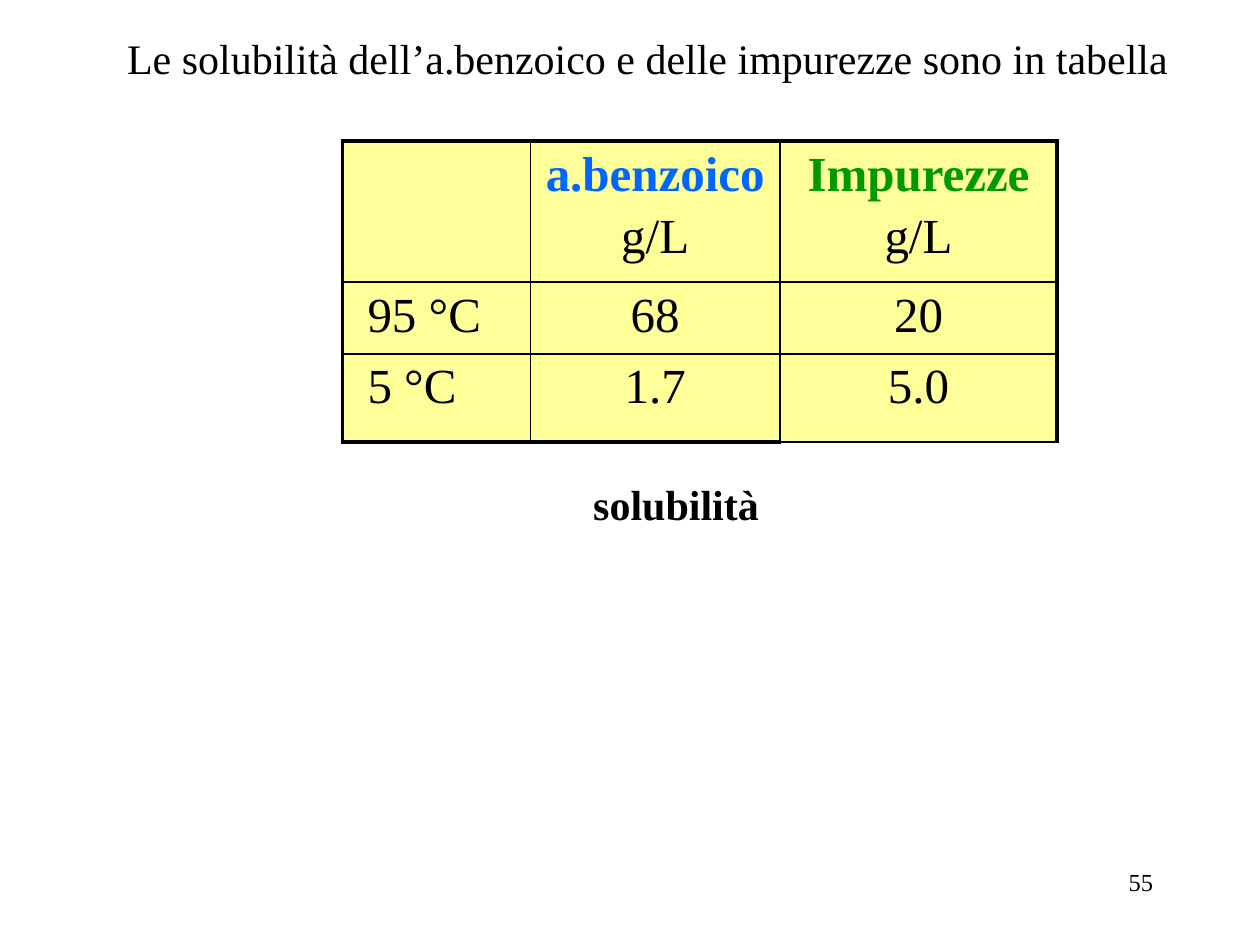
from lxml.etree import SubElement
from pptx import Presentation
from pptx.dml.color import RGBColor
from pptx.enum.text import MSO_AUTO_SIZE, PP_ALIGN
from pptx.oxml.ns import qn
from pptx.util import Inches, Pt

FONT = "Times New Roman"
COLORS = {"ink": "000000", "acid": "0066FF", "waste": "009900", "cell": "FFFF99"}
COLS = [1.49, 1.98, 2.2]
ROWS = [1.12, 0.57, 0.7]
CELLS = [
    [[], [("a.benzoico", "acid", True), ("g/L", "ink", False)],
     [("Impurezze", "waste", True), ("g/L", "ink", False)]],
    [[(" 95 °C", "ink", False)], [("68", "ink", False)], [("20", "ink", False)]],
    [[(" 5 °C", "ink", False)], [("1.7", "ink", False)], [("5.0", "ink", False)]],
]


def color(name):
    """Return the named colour."""
    return RGBColor.from_string(COLORS[name])


def add_run(para, text, size, tone="ink", bold=False):
    """Add one styled run to a paragraph."""
    run = para.add_run()
    run.text = text
    font = run.font
    font.name, font.size, font.bold = FONT, Pt(size), bold
    font.color.rgb = color(tone)


def add_text(slide, box, text, size, bold=False, align=PP_ALIGN.LEFT, grow=True):
    """Add a one-line text box."""
    frame = slide.shapes.add_textbox(*map(Inches, box)).text_frame
    frame.word_wrap = True
    frame.auto_size = MSO_AUTO_SIZE.SHAPE_TO_FIT_TEXT if grow else MSO_AUTO_SIZE.NONE
    para = frame.paragraphs[0]
    para.alignment = align
    add_run(para, text, size, bold=bold)


def set_edges(cell, widths):
    """Draw the left, right, top and bottom borders of a cell."""
    props = cell._tc.get_or_add_tcPr()
    for spot, (side, width) in enumerate(zip("LRTB", widths)):
        line = SubElement(props, qn(f"a:ln{side}"), w=str(Pt(width)))
        fill = SubElement(line, qn("a:solidFill"))
        SubElement(fill, qn("a:srgbClr"), val=COLORS["ink"])
        props.insert(spot, line)


def fill_cell(cell, lines, align):
    """Colour a cell and write its lines."""
    cell.fill.solid()
    cell.fill.fore_color.rgb = color("cell")
    frame = cell.text_frame
    if not lines:
        frame.paragraphs[0].font.size = Pt(28)
    for i, (text, tone, bold) in enumerate(lines):
        para = frame.add_paragraph() if i else frame.paragraphs[0]
        para.alignment = align
        if i:
            para.space_before = Pt(4.5)
        add_run(para, text, 28, tone, bold)


def add_grid(slide, left, top):
    """Add the solubility table with its heavy outer frame."""
    size = map(Inches, (left, top, sum(COLS), sum(ROWS)))
    table = slide.shapes.add_table(len(ROWS), len(COLS), *size).table
    table.first_row = table.horz_banding = False
    for col, width in zip(table.columns, COLS):
        col.width = Inches(width)
    for row, height in zip(table.rows, ROWS):
        row.height = Inches(height)
    end = len(COLS) - 1
    base = len(ROWS) - 1
    for r, line in enumerate(CELLS):
        for c, lines in enumerate(line):
            cell = table.cell(r, c)
            fill_cell(cell, lines, PP_ALIGN.CENTER if c else PP_ALIGN.LEFT)
            heavy = (c == 0, c == end, r == 0, r == base and c < end)
            set_edges(cell, [2.25 if edge else 1 for edge in heavy])


def main():
    """Build and save the slide."""
    deck = Presentation()
    deck.slide_width, deck.slide_height = Inches(10), Inches(7.5)
    slide = deck.slides.add_slide(deck.slide_layouts[6])
    add_text(slide, (4.61, 3.75, 1.57, 0.5), "solubilità", 24, bold=True)
    add_grid(slide, 2.72, 1.12)
    add_text(slide, (0.91, 0.21, 8.82, 0.5),
             "Le solubilità dell’a.benzoico e delle impurezze sono in tabella", 24)
    add_text(slide, (7.17, 6.83, 2.08, 0.5), "55", 14, align=PP_ALIGN.RIGHT, grow=False)
    deck.save("out.pptx")


if __name__ == "__main__":
    main()
